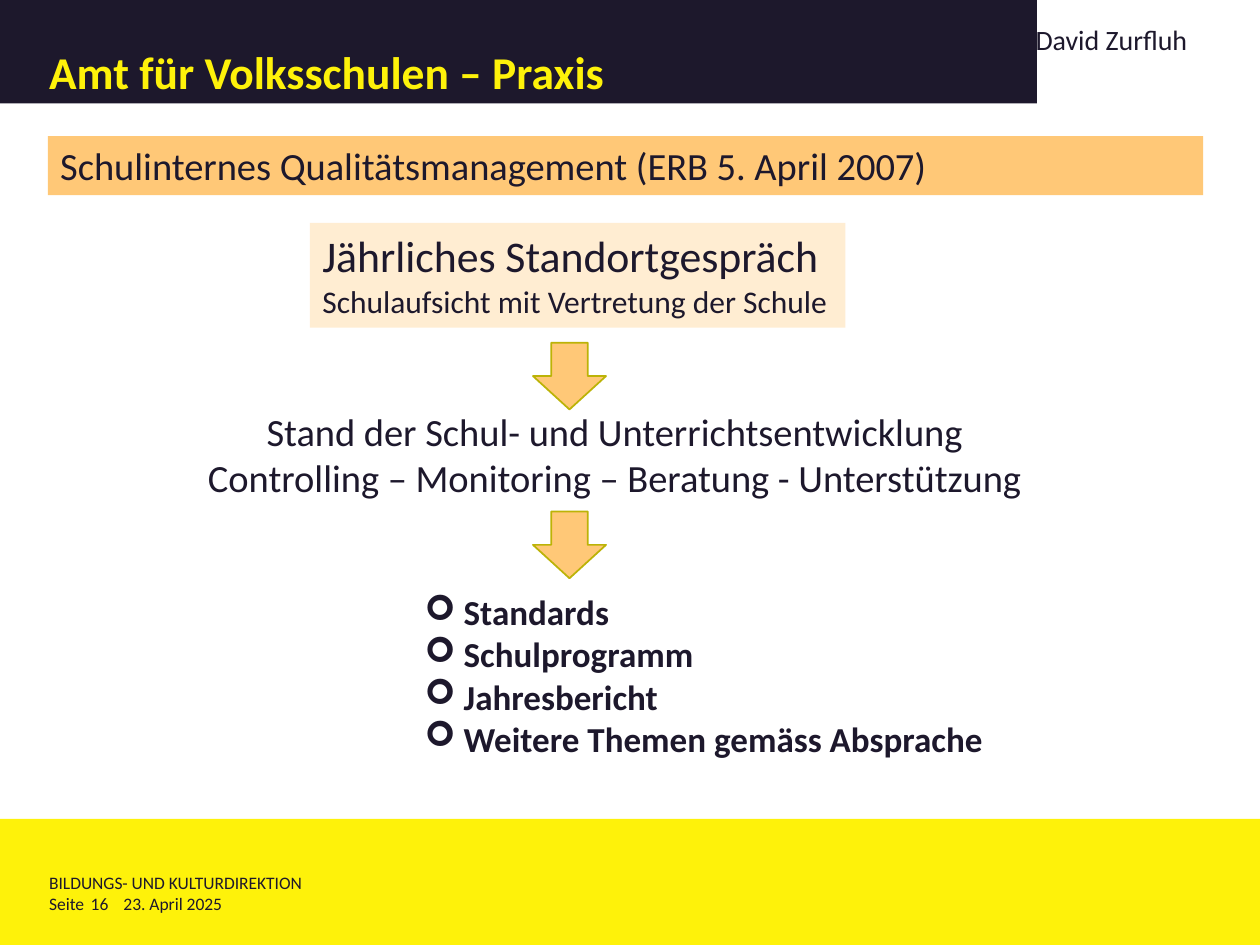
from dataclasses import dataclass
from typing import Optional

from lxml import etree
from pptx import Presentation
from pptx.dml.color import RGBColor
from pptx.enum.shapes import MSO_SHAPE
from pptx.enum.text import MSO_ANCHOR, MSO_AUTO_SIZE, PP_ALIGN
from pptx.oxml.ns import qn
from pptx.util import Inches, Pt

RECTANGLE = MSO_SHAPE.RECTANGLE
DOWN_ARROW = MSO_SHAPE.DOWN_ARROW
TOP, BOTTOM = MSO_ANCHOR.TOP, MSO_ANCHOR.BOTTOM
LEFT, CENTER = PP_ALIGN.LEFT, PP_ALIGN.CENTER
NO_AUTOFIT = MSO_AUTO_SIZE.NONE

NAVY = RGBColor(0x1D, 0x18, 0x2C)
YELLOW = RGBColor(0xFE, 0xF2, 0x0A)
ORANGE = RGBColor(0xFF, 0xC8, 0x77)
CREAM = RGBColor(0xFF, 0xED, 0xD2)
OLIVE = RGBColor(0xBC, 0xB3, 0x07)

NO_INSETS = (0, 0, 0, 0)
BOX_INSETS = (0.1, 0.05, 0.1, 0.05)
TITLE_INSETS = (0.39, 0.08, 0.08, 0.04)
BULLET_INDENT = Inches(0.31)


@dataclass
class Line:
    text: str
    size: float


@dataclass
class Panel:
    left: float
    top: float
    width: float
    height: float
    lines: tuple[Line, ...] = ()
    fill: Optional[RGBColor] = None
    align: PP_ALIGN = LEFT
    insets: tuple[float, ...] = BOX_INSETS
    breaks: bool = False


FOOTER = (
    Panel(0.39, 6.92, 7.48, 0.17, (Line("BILDUNGS- UND KULTURDIREKTION", 10),), insets=NO_INSETS),
    Panel(0.39, 7.09, 0.35, 0.17, (Line("Seite", 10),), insets=NO_INSETS),
    Panel(0.98, 7.09, 2.28, 0.17, (Line("23. April 2025", 10),), insets=NO_INSETS),
    Panel(0.72, 7.09, 0.3, 0.17, (Line("16", 10),), insets=NO_INSETS),
)
CONTENT = (
    Panel(2.46, 1.77, 4.25, 0.83,
          (Line("Jährliches Standortgespräch", 25),
           Line("Schulaufsicht mit Vertretung der Schule", 18)), CREAM, breaks=True),
    Panel(1.26, 3.19, 7.24, 0.84,
          (Line("Stand der Schul- und Unterrichtsentwicklung", 22),
           Line("Controlling – Monitoring – Beratung - Unterstützung", 22)), align=CENTER),
    Panel(0.38, 1.08, 9.17, 0.47,
          (Line("Schulinternes Qualitätsmanagement (ERB 5. April 2007)", 22),), ORANGE),
    Panel(8.12, 0.13, 1.68, 0.37, (Line("David Zurfluh", 16),)),
)
ARROW_TOPS = (2.72, 4.06)
TOPICS = ("Standards", "Schulprogramm", "Jahresbericht", "Weitere Themen gemäss Absprache")


def apply(target, formats: dict) -> None:
    for name, value in formats.items():
        setattr(target, name, value)


def place(shape, left: float, top: float, width: float, height: float) -> None:
    apply(shape, {"left": Inches(left), "top": Inches(top),
                  "width": Inches(width), "height": Inches(height)})


def format_frame(frame, insets: tuple[float, ...], anchor: MSO_ANCHOR = TOP) -> None:
    left, top, right, bottom = map(Inches, insets)
    apply(frame, {"margin_left": left, "margin_top": top, "margin_right": right,
                  "margin_bottom": bottom, "vertical_anchor": anchor,
                  "auto_size": NO_AUTOFIT, "word_wrap": True})


def format_font(font, size: float, color: RGBColor = NAVY, bold: bool = False) -> None:
    apply(font, {"name": "Calibri", "size": Pt(size), "bold": bold})
    font.color.rgb = color


def draw_shape(slide, kind: MSO_SHAPE, fill: RGBColor, bounds: tuple[float, ...]):
    shape = slide.shapes.add_shape(kind, *map(Inches, bounds))
    shape.shadow.inherit = False
    shape.fill.solid()
    shape.fill.fore_color.rgb = fill
    shape.line.fill.background()
    return shape


def draw_panel(slide, panel: Panel) -> None:
    bounds = (panel.left, panel.top, panel.width, panel.height)
    if panel.fill is None:
        box = slide.shapes.add_textbox(*map(Inches, bounds))
    else:
        box = draw_shape(slide, RECTANGLE, panel.fill, bounds)
    frame = box.text_frame
    format_frame(frame, panel.insets)
    paragraph = frame.paragraphs[0]
    for index, line in enumerate(panel.lines):
        if index and panel.breaks:
            paragraph.add_line_break()
        elif index:
            paragraph = frame.add_paragraph()
        paragraph.alignment = panel.align
        run = paragraph.add_run()
        run.text = line.text
        format_font(run.font, line.size)


def draw_arrow(slide, top: float) -> None:
    arrow = draw_shape(slide, DOWN_ARROW, ORANGE, (4.23, top, 0.58, 0.53))
    arrow.line.color.rgb = OLIVE
    arrow.line.width = Pt(1)


def fill_title(title) -> None:
    place(title, 0, 0, 8.23, 0.82)
    title.fill.solid()
    title.fill.fore_color.rgb = NAVY
    format_frame(title.text_frame, TITLE_INSETS, BOTTOM)
    title.text_frame.text = "Amt für Volksschulen – Praxis"
    heading = title.text_frame.paragraphs[0]
    apply(heading, {"alignment": LEFT, "line_spacing": 0.8})
    format_font(heading.font, 26, YELLOW, True)


def fill_topics(body) -> None:
    place(body, 3.27, 4.64, 4.65, 1.45)
    format_frame(body.text_frame, BOX_INSETS)
    body.text_frame.text = "\n".join(TOPICS)
    for topic in body.text_frame.paragraphs:
        properties = topic._p.get_or_add_pPr()
        properties.set("marL", str(BULLET_INDENT))
        properties.set("indent", str(-BULLET_INDENT))
        etree.SubElement(properties, qn("a:buFont"), typeface="Wingdings")
        etree.SubElement(properties, qn("a:buChar"), char="➢")
        topic.space_before = Pt(0)
        format_font(topic.font, 20, bold=True)


def main() -> None:
    deck = Presentation()
    apply(deck, {"slide_width": Inches(10), "slide_height": Inches(7.5)})
    slide = deck.slides.add_slide(deck.slide_layouts[1])
    fill_title(slide.shapes.title)
    fill_topics(slide.placeholders[1])
    draw_shape(slide, RECTANGLE, YELLOW, (0, 6.5, 10, 1))
    for panel in FOOTER + CONTENT:
        draw_panel(slide, panel)
    for top in ARROW_TOPS:
        draw_arrow(slide, top)
    deck.save("out.pptx")


if __name__ == "__main__":
    main()
